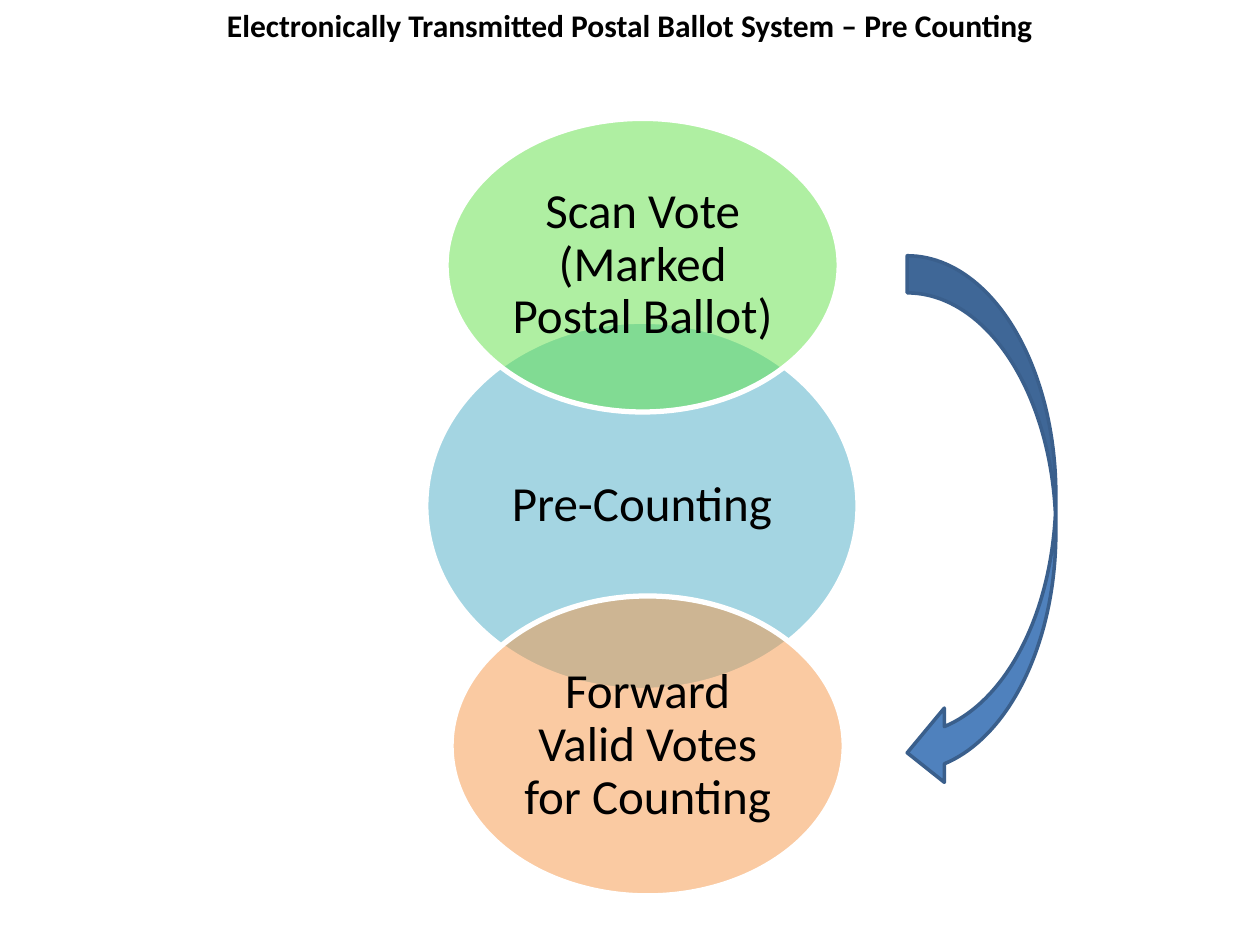
from dataclasses import dataclass

from lxml import etree
from pptx import Presentation
from pptx.dml.color import RGBColor
from pptx.enum import shapes, text
from pptx.oxml import ns
from pptx.util import Inches, Pt


@dataclass(frozen=True)
class Theme:
    font: str = "Calibri"
    ink: str = "000000"
    outline: str = "FFFFFF"
    arrow: str = "4F81BD"
    arrow_line: str = "3A5F8C"
    title_size: int = 18
    stage_size: int = 28


@dataclass(frozen=True)
class Stage:
    label: str
    left: float
    top: float
    width: float
    height: float
    color: str


THEME = Theme()
STAGES = [
    Stage("Pre-Counting", 3.38, 2.55, 3.43, 2.93, "4BACC6"),
    Stage("Scan Vote (Marked Postal Ballot)", 3.54, 0.94, 3.12, 2.33, "60E146"),
    Stage("Forward Valid Votes for Counting", 3.58, 4.73, 3.12, 2.38, "F79646"),
]


def write(tf, label: str, size: int, bold: bool = False) -> None:
    p = tf.paragraphs[0]
    p.alignment = text.PP_ALIGN.CENTER
    r = p.add_run()
    r.text = label
    r.font.name = THEME.font
    r.font.size = Pt(size)
    r.font.bold = bold
    r.font.color.rgb = RGBColor.from_string(THEME.ink)


def paint(sp, fill: str, line: str, weight: float) -> None:
    sp.shadow.inherit = False
    sp.fill.solid()
    sp.fill.fore_color.rgb = RGBColor.from_string(fill)
    sp.line.color.rgb = RGBColor.from_string(line)
    sp.line.width = Pt(weight)


def set_opacity(sp, percent: int) -> None:
    color = sp._element.spPr.find(ns.qn("a:solidFill")).find(ns.qn("a:srgbClr"))
    etree.SubElement(color, ns.qn("a:alpha"), val=str(percent * 1000))


def add_title(s, label: str) -> None:
    sp = s.shapes.title
    sp.left, sp.top, sp.width, sp.height = (Inches(v) for v in (0, 0, 10, 0.4))
    tf = sp.text_frame
    tf.word_wrap = True
    tf.auto_size = text.MSO_AUTO_SIZE.SHAPE_TO_FIT_TEXT
    tf.vertical_anchor = text.MSO_ANCHOR.TOP
    write(tf, label, THEME.title_size, bold=True)


def add_stage(s, stage: Stage) -> None:
    sp = s.shapes.add_shape(
        shapes.MSO_SHAPE.OVAL,
        Inches(stage.left), Inches(stage.top),
        Inches(stage.width), Inches(stage.height),
    )
    paint(sp, stage.color, THEME.outline, 3)
    set_opacity(sp, 50)
    tf = sp.text_frame
    tf.word_wrap = True
    tf.vertical_anchor = text.MSO_ANCHOR.MIDDLE
    tf.margin_left = tf.margin_right = Inches(0.04)
    tf.margin_top = tf.margin_bottom = Inches(0.04)
    write(tf, stage.label, THEME.stage_size)
    tf.paragraphs[0].line_spacing = 0.9


def add_flow_arrow(s) -> None:
    sp = s.shapes.add_shape(
        shapes.MSO_SHAPE.CURVED_LEFT_ARROW,
        Inches(7.2), Inches(2.03), Inches(1.18), Inches(4.24),
    )
    paint(sp, THEME.arrow, THEME.arrow_line, 2)


def main() -> None:
    prs = Presentation()
    prs.slide_width, prs.slide_height = Inches(10), Inches(7.5)
    s = prs.slides.add_slide(prs.slide_layouts.get_by_name("Title Only"))
    add_title(s, "Electronically Transmitted Postal Ballot System – Pre Counting")
    for stage in STAGES:
        add_stage(s, stage)
    add_flow_arrow(s)
    prs.save("out.pptx")


if __name__ == "__main__":
    main()
